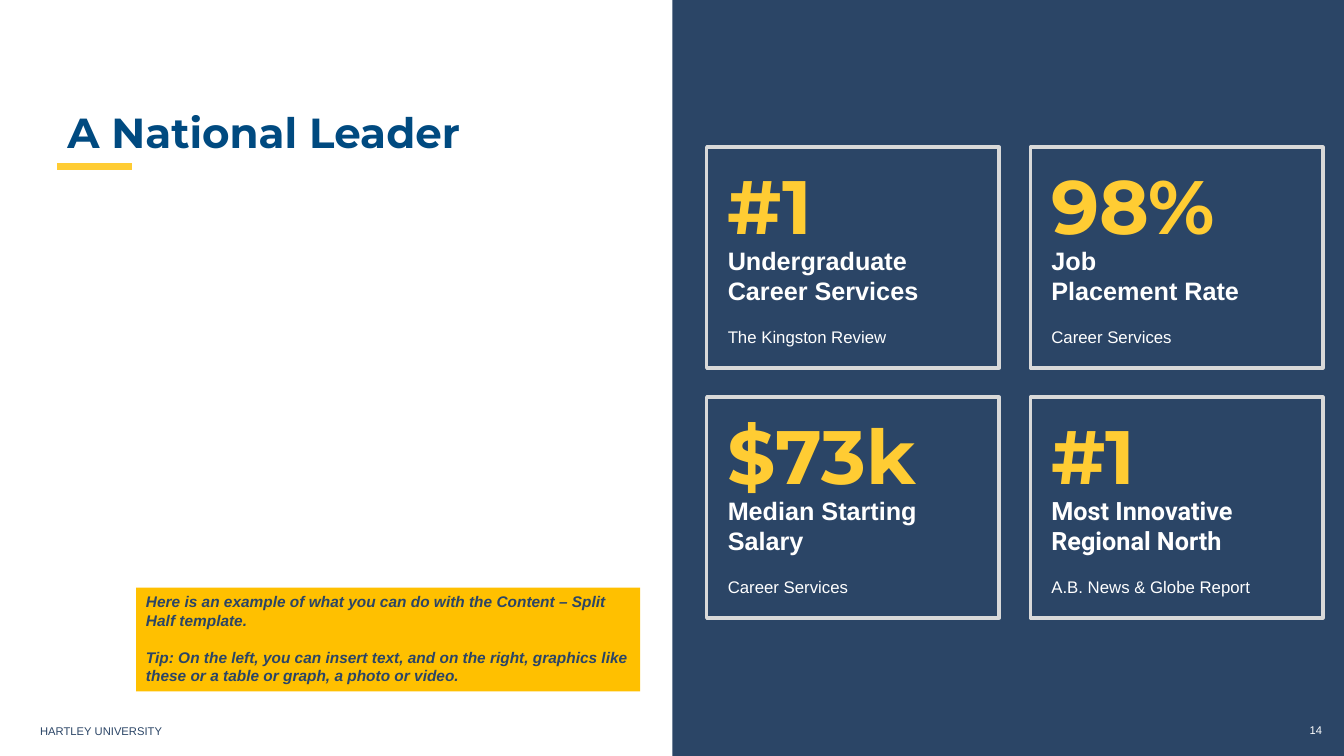
from pptx import Presentation
from pptx.dml.color import RGBColor
from pptx.enum.shapes import MSO_CONNECTOR, MSO_SHAPE
from pptx.enum.text import MSO_ANCHOR, PP_ALIGN
from pptx.oxml.ns import qn
from pptx.util import Inches, Pt
from lxml import etree

NAVY = RGBColor(0x2B, 0x45, 0x66)
BLUE = RGBColor(0x00, 0x4A, 0x80)
GOLD = RGBColor(0xFF, 0xCC, 0x33)
AMBER = RGBColor(0xFF, 0xC0, 0x00)
GREY = RGBColor(0xD9, 0xD9, 0xD9)
WHITE = RGBColor(0xFF, 0xFF, 0xFF)

RECT = MSO_SHAPE.RECTANGLE
STRAIGHT = MSO_CONNECTOR.STRAIGHT
TOP, BOTTOM = MSO_ANCHOR.TOP, MSO_ANCHOR.BOTTOM
LEFT = PP_ALIGN.LEFT

INSETS = (0.1, 0.05, 0.1, 0.05)
CARD_W, CARD_H = 2.9, 2.19
CARD_X, CARD_Y = 7.01, 1.46
STEP_X, STEP_Y = 3.21, 2.48

CARDS = [
    ("#1", "Undergraduate Career Services", "The Kingston Review", "Arial"),
    ("98%", "Job \vPlacement Rate", "Career Services", "Arial"),
    ("$73k", "Median Starting Salary", "Career Services", "Arial"),
    ("#1", "Most Innovative\vRegional North", "A.B. News & Globe Report", "Roboto"),
]


def write(sp, *paragraphs, size, color, font="Arial", bold=False, italic=False,
          anchor=TOP, insets=INSETS, line_spacing=None, gap=0):
    """Fill a shape with paragraphs; a vertical tab in the text breaks the line."""
    tf = sp.text_frame
    tf.word_wrap = True
    tf.vertical_anchor = anchor
    tf.margin_left, tf.margin_top, tf.margin_right, tf.margin_bottom = map(Inches, insets)
    for i, text in enumerate(paragraphs):
        p = tf.add_paragraph() if i else tf.paragraphs[0]
        p.text = text
        p.alignment = LEFT
        p.line_spacing = line_spacing
        p.space_before = Pt(gap if i else 0)
        for r in p.runs:
            r.font.size = Pt(size)
            r.font.name = font
            r.font.bold = bold
            r.font.italic = italic
            r.font.color.rgb = color


def add_text(shapes, box, text, **fmt):
    write(shapes.add_textbox(*map(Inches, box)), text, **fmt)


def add_rect(shapes, box, fill=None, line=None):
    sp = shapes.add_shape(RECT, *map(Inches, box))
    sp.shadow.inherit = False
    if fill is None:
        sp.fill.background()
    else:
        sp.fill.solid()
        sp.fill.fore_color.rgb = fill
    if line is None:
        sp.line.fill.background()
    else:
        sp.line.color.rgb = line
        sp.line.width = Pt(2.5)
    return sp


def add_title(shapes, x, y, w, h):
    """Title with the gold rule under its left end."""
    rule_y = y + h + 0.09
    rule = shapes.add_connector(STRAIGHT, Inches(x), Inches(rule_y),
                                Inches(x + 0.74), Inches(rule_y))
    rule.line.color.rgb = GOLD
    rule.line.width = Pt(5)
    etree.SubElement(rule._element.spPr, qn("a:effectLst"))
    add_text(shapes, (x, y, w, h), "A National Leader", size=30, font="Montserrat",
             color=BLUE, bold=True, anchor=BOTTOM, insets=(0.1, 0, 0, 0),
             line_spacing=0.9)


def add_footer(shapes, y):
    add_text(shapes, (0.3, y, 1.76, 0.24), "HARTLEY UNIVERSITY", size=8, color=NAVY)
    add_text(shapes, (12.99, y + 0.04, 0.31, 0.38), "14", size=8, color=WHITE,
             insets=(0, 0, 0, 0))


def add_card(shapes, x, y, figure, label, source, label_font):
    card = shapes.add_group_shape().shapes
    add_rect(card, (x, y, CARD_W, CARD_H), line=GREY)
    left = x + 0.11
    add_text(card, (left, y + 0.07, 2.21, 1.01), figure, size=54, font="Montserrat",
             color=GOLD, bold=True)
    add_text(card, (left, y + 0.92, 2.34, 0.71), label, size=18, font=label_font,
             color=WHITE, bold=True)
    add_text(card, (left, y + 1.73, 2.64, 0.3), source, size=12, color=WHITE)


def add_tip(shapes, *box):
    write(add_rect(shapes, box, fill=AMBER),
          "Here is an example of what you can do with the Content – Split Half template.",
          "Tip: On the left, you can insert text, and on the right, graphics like these "
          "or a table or graph, a photo or video.",
          size=11, color=NAVY, bold=True, italic=True, gap=13)


def main():
    prs = Presentation()
    prs.slide_width, prs.slide_height = Inches(13.33), Inches(7.5)
    s = prs.slides.add_slide(prs.slide_layouts[6])
    add_rect(s.shapes, (6.67, 0, 6.66, 7.5), fill=NAVY)
    add_footer(s.shapes, 7.14)
    add_title(s.shapes, 0.57, 0.45, 5.62, 1.11)
    for i, card in enumerate(CARDS):
        row, col = divmod(i, 2)
        add_card(s.shapes, CARD_X + col * STEP_X, CARD_Y + row * STEP_Y, *card)
    add_tip(s.shapes, 1.35, 5.83, 5, 1.03)
    prs.save("out.pptx")


if __name__ == "__main__":
    main()
